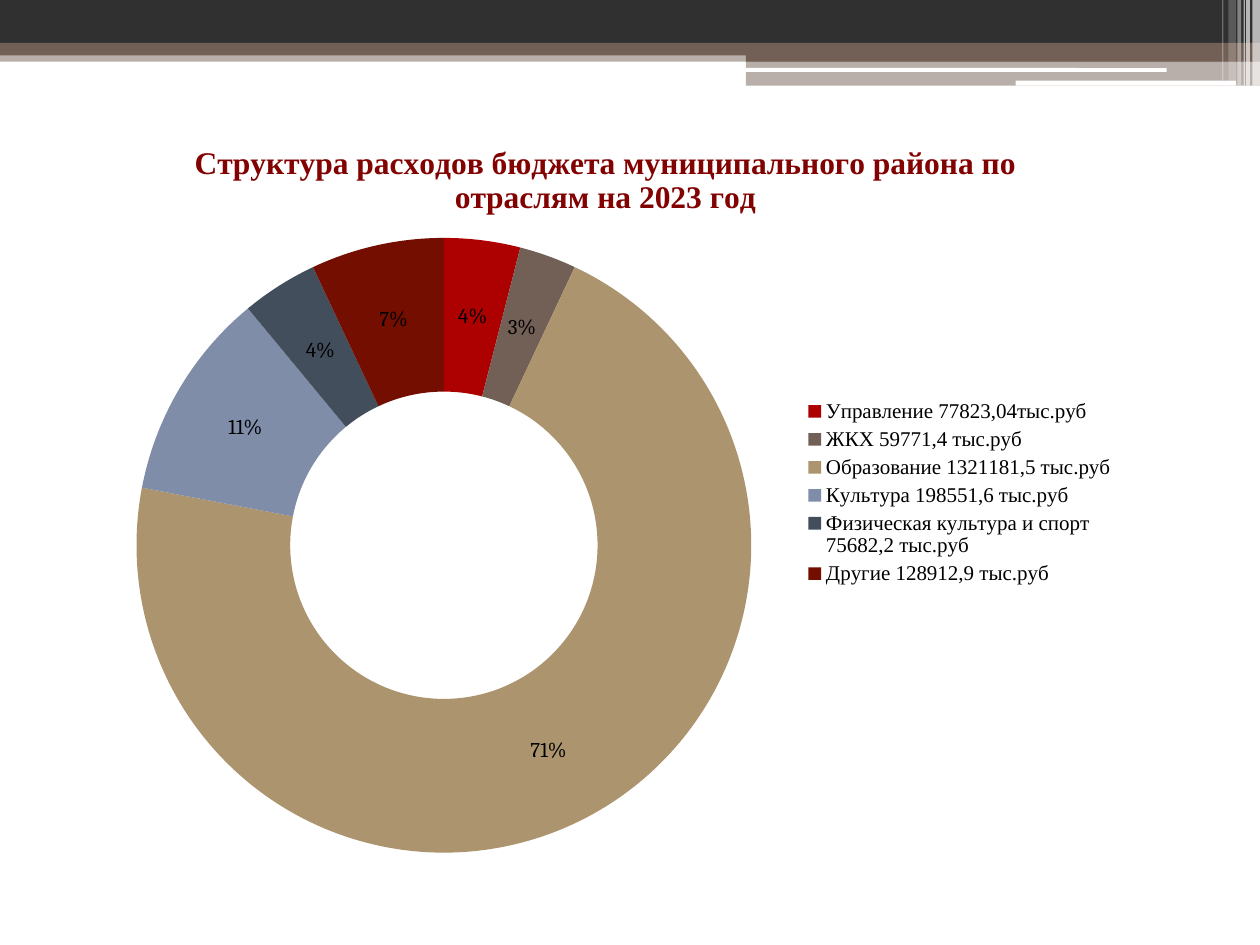
import pptx
import pptx.chart.data
import pptx.dml.color
import pptx.enum.chart
import pptx.enum.shapes
import pptx.oxml
import pptx.oxml.ns
import pptx.util

COLORS = {
    "dark": "303030", "brown": "726056", "white": "FFFFFF", "black": "000000",
    "title": "820101", "red": "AD0101", "sand": "AC956E", "blue": "808DA9",
    "slate": "424E5B", "maroon": "730E00",
}
SERIF = "Times New Roman"
TITLE = "Структура расходов бюджета муниципального района по отраслям на 2023 год"
SECTORS = [
    ("Управление 77823,04тыс.руб", 4, "red"),
    ("ЖКХ 59771,4 тыс.руб", 3, "brown"),
    ("Образование 1321181,5 тыс.руб", 71, "sand"),
    ("Культура 198551,6 тыс.руб", 11, "blue"),
    ("Физическая культура и спорт 75682,2 тыс.руб", 4, "slate"),
    ("Другие 128912,9 тыс.руб", 7, "maroon"),
]
BANDS = [
    (0, 0.4, 10, 0.09, "brown", 50),
    (0, 0, 10, 0.34, "dark", 100),
    (0, 0.34, 10, 0.1, "brown", 100),
    (5.92, 0.39, 4.08, 0.1, "brown", 100),
    (5.92, 0.48, 4.08, 0.2, "brown", 50),
]
RULES = [(5.91, 0.54, 3.35, 0.03), (8.06, 0.64, 1.75, 0.04)]
STRIPES = [
    (9.94, 0.06, 0.68, 65), (9.89, 0.03, 0.68, 65), (9.87, 0.01, 0.68, 60),
    (9.82, 0.03, 0.68, 40), (9.75, 0.06, 0.64, 20), (9.7, 0.01, 0.64, 30),
]


class Deck:
    COLS, ROWS = 10, 7.5

    def __init__(self):
        self.prs = pptx.Presentation()
        self.prs.slide_width = pptx.util.Inches(10)
        self.prs.slide_height = pptx.util.Inches(7.5)
        self.s = self.prs.slides.add_slide(self.prs.slide_layouts[6])

    def box(self, x, y, w, h):
        col = self.prs.slide_width / self.COLS
        row = self.prs.slide_height / self.ROWS
        return [round(v) for v in (x * col, y * row, w * col, h * row)]

    def rgb(self, name):
        return pptx.dml.color.RGBColor.from_string(COLORS[name])

    def fill(self, fmt, color):
        fmt.fill.solid()
        fmt.fill.fore_color.rgb = self.rgb(color)

    def font(self, f, name, size, color="black", bold=False):
        f.name, f.size, f.bold = name, pptx.util.Pt(size), bold
        f.color.rgb = self.rgb(color)

    def bar(self, x, y, w, h, color, alpha=100, rounded=False):
        shapes = pptx.enum.shapes.MSO_SHAPE
        kind = shapes.ROUNDED_RECTANGLE if rounded else shapes.RECTANGLE
        sp = self.s.shapes.add_shape(kind, *self.box(x, y, w, h))
        sp.shadow.inherit = False
        sp.line.fill.background()
        self.fill(sp, color)
        if alpha < 100:
            clr = sp.fill._xPr.find(".//" + pptx.oxml.ns.qn("a:srgbClr"))
            pptx.oxml.ns.qn
            node = clr.makeelement(pptx.oxml.ns.qn("a:alpha"), {"val": str(alpha * 1000)})
            clr.append(node)

    def layout(self, parent, x, y, w, h, inner=False):
        ns = pptx.oxml.ns.nsdecls("c")
        target = '<c:layoutTarget val="inner"/>' if inner else ""
        modes = "".join(f'<c:{a}Mode val="edge"/>' for a in "xy")
        sizes = "".join(f'<c:{k} val="{v}"/>' for k, v in zip("xywh", (x, y, w, h)))
        for old in parent.findall(pptx.oxml.ns.qn("c:layout")):
            parent.remove(old)
        node = pptx.oxml.parse_xml(
            f"<c:layout {ns}><c:manualLayout>{target}{modes}{sizes}</c:manualLayout></c:layout>")
        parent.insert(0 if inner else 1, node)

    def doughnut(self, x, y, w, h, title, sectors):
        enums = pptx.enum.chart
        data = pptx.chart.data.CategoryChartData()
        data.categories = [name for name, _, _ in sectors]
        data.add_series("Series 1", [value for _, value, _ in sectors])
        chart = self.s.shapes.add_chart(
            enums.XL_CHART_TYPE.DOUGHNUT, *self.box(x, y, w, h), data).chart
        self.font(chart.font, "Cambria", 12)
        chart.has_title = True
        p = chart.chart_title.text_frame.paragraphs[0]
        r = p.add_run()
        r.text = title
        self.font(r.font, SERIF, 18, "title", True)
        chart.has_legend = True
        legend = chart.legend
        legend.position = enums.XL_LEGEND_POSITION.RIGHT
        legend.include_in_layout = False
        self.font(legend.font, SERIF, 12)
        self.layout(legend._element, 0.69, 0.37, 0.3, 0.26)
        plot = chart.plots[0]
        plot.vary_by_categories = True
        self.layout(chart._chartSpace.chart.plotArea, 0.05, 0.16, 0.59, 0.82, inner=True)
        plot.has_data_labels = True
        labels = plot.data_labels
        labels.show_percentage, labels.show_value = True, False
        labels.number_format, labels.number_format_is_linked = "0%", False
        self.font(labels.font, "Cambria", 12)
        for i, (_, _, color) in enumerate(sectors):
            self.fill(plot.series[0].points[i].format, color)


def main():
    deck = Deck()
    for band in BANDS:
        deck.bar(*band)
    for rule in RULES:
        deck.bar(*rule, "white", rounded=True)
    for x, w, h, alpha in STRIPES:
        deck.bar(x, 0, w, h, "white", alpha)
    deck.doughnut(0.67, 0.92, 8.27, 5.98, TITLE, SECTORS)
    deck.prs.save("out.pptx")


if __name__ == "__main__":
    main()
